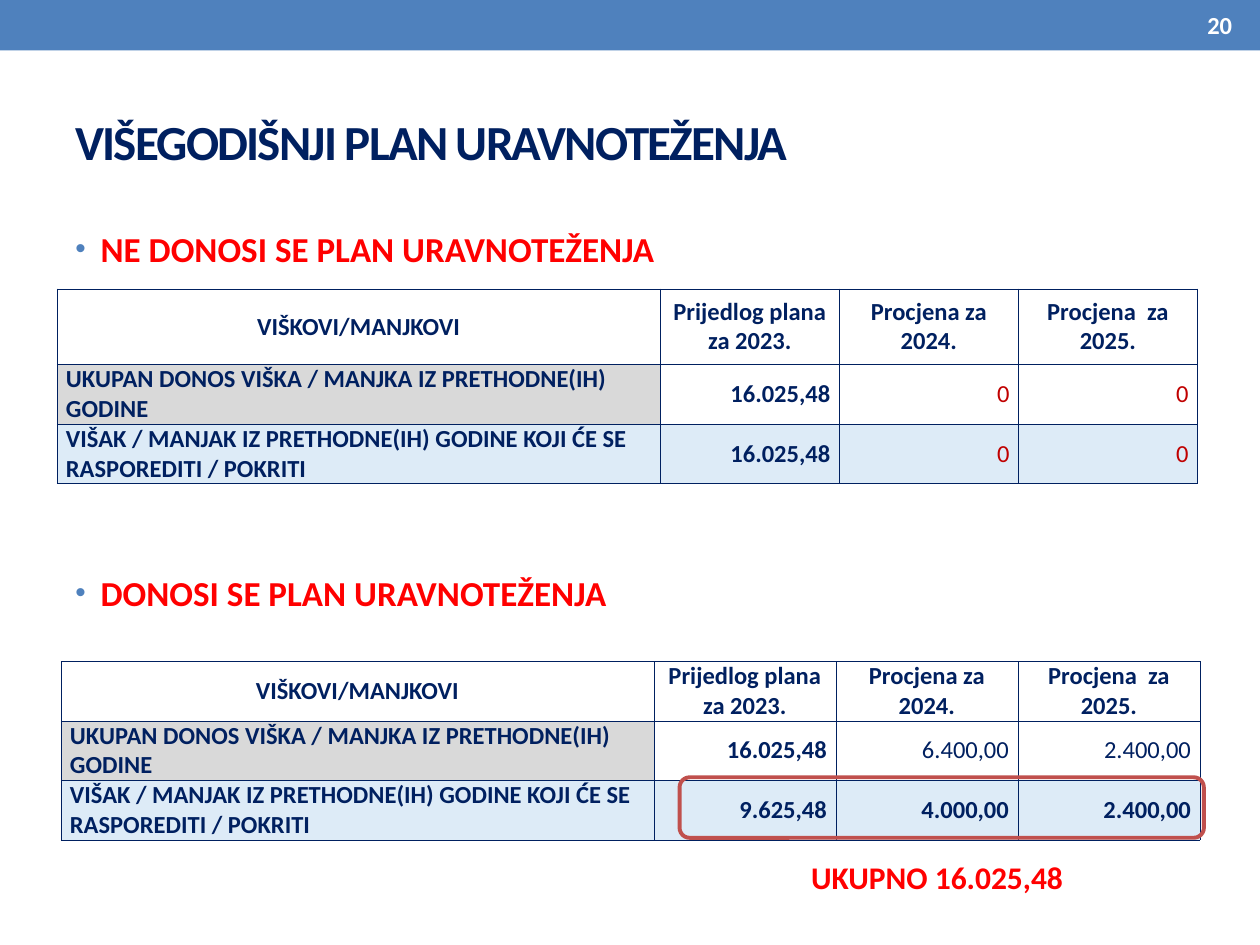
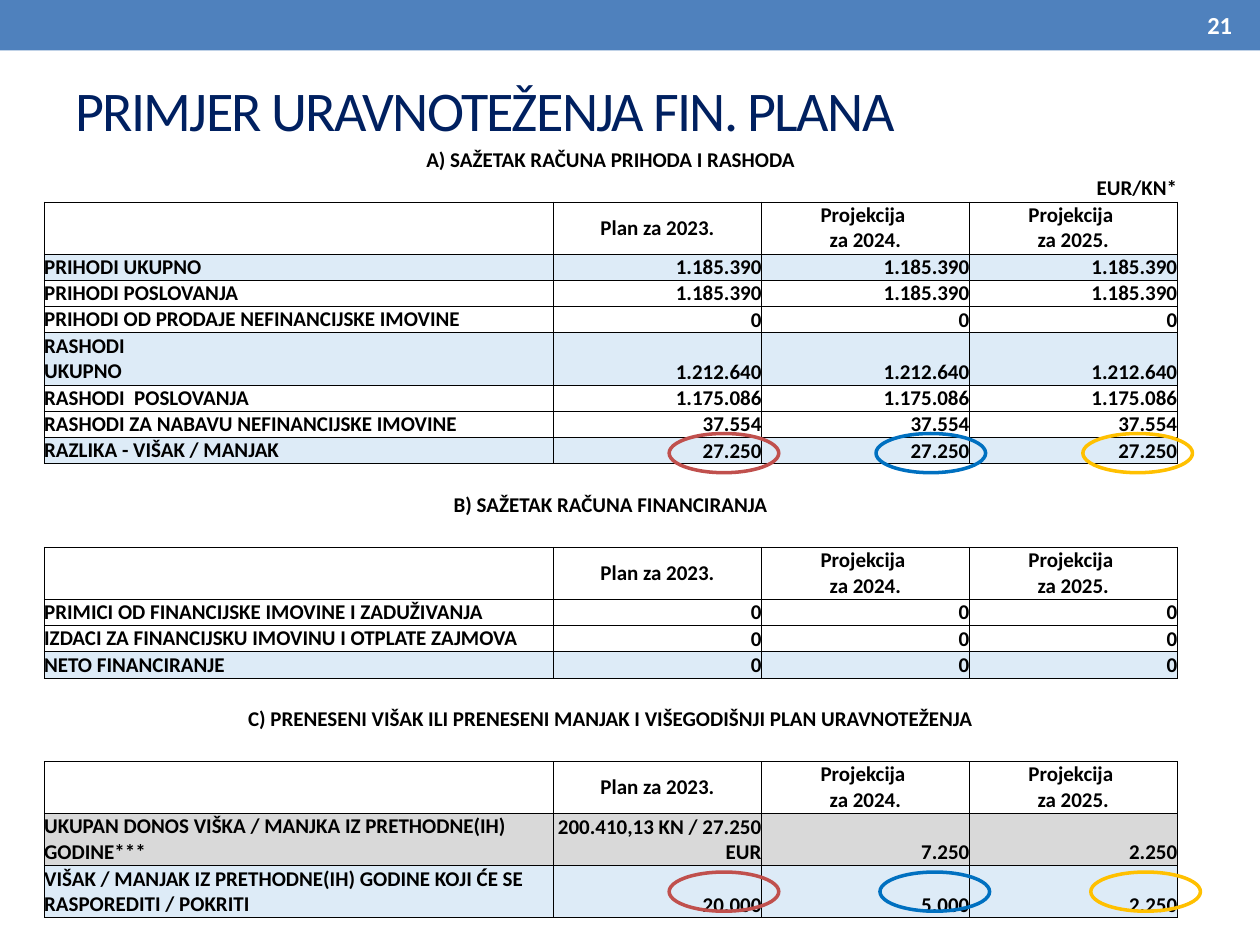
"""Build two slides on the multi-year balancing plan."""
import copy

import lxml.etree
import pptx
import pptx.dml.color
import pptx.enum.shapes
import pptx.enum.text
import pptx.oxml.ns
import pptx.util

Cm, Pt = pptx.util.Cm, pptx.util.Pt
Align = pptx.enum.text.PP_ALIGN
Anchor = pptx.enum.text.MSO_ANCHOR
Shape = pptx.enum.shapes.MSO_SHAPE
qn = pptx.oxml.ns.qn

HUES = {
    "band": "4F81BD", "navy": "002060", "red": "FF0000", "dark": "C00000",
    "brick": "C0504D", "azure": "0070C0", "gold": "FFC000", "black": "000000",
    "white": "FFFFFF", "grey": "D9D9D9", "pale": "DDEBF7",
}
FORMS = {
    "title": ({"size": Pt(28), "bold": True}, "navy"),
    "large": ({"size": Pt(32), "bold": False}, "navy"),
    "point": ({"size": Pt(20), "bold": True}, "red"),
    "total": ({"size": Pt(18), "bold": True}, "red"),
    "page": ({"size": Pt(14), "bold": True}, "white"),
    "strong": ({"size": Pt(14), "bold": True}, "navy"),
    "light": ({"size": Pt(14), "bold": False}, "navy"),
    "zero": ({"size": Pt(14), "bold": False}, "dark"),
    "small": ({"size": Pt(12), "bold": True}, "black"),
}
PLAIN = "{2D5ABB26-0587-4C30-8999-92F81FD0307C}"
DONOS = "UKUPAN DONOS VIŠKA / MANJKA IZ PRETHODNE(IH) GODINE"
VISAK = "VIŠAK / MANJAK IZ PRETHODNE(IH) GODINE KOJI ĆE SE RASPOREDITI / POKRITI"


def tint(name):
    return pptx.dml.color.RGBColor.from_string(HUES[name])


def assign(item, values):
    for key, value in values.items():
        setattr(item, key, value)


class Deck:
    def __init__(self):
        self.file = pptx.Presentation()
        assign(self.file, {"slide_width": Cm(25.4), "slide_height": Cm(19.05)})
        self.slide = None

    def page(self, title, form, high, number):
        self.slide = self.file.slides.add_slide(self.file.slide_layouts[6])
        self.shape(Shape.RECTANGLE, (0, 0, 25.4, 1.02), fill="band")
        para = self.text(title, (1.27, 1.47, 22.86, high), form)
        para.runs[0].font._element.set("spc", "-100")
        self.text(number, (23.09, 0.05, 2, 0.91), "page", Align.RIGHT)

    def shape(self, kind, box, fill=None, line=None, width=2):
        item = self.slide.shapes.add_shape(kind, *map(Cm, box))
        item.shadow.inherit = False
        if fill:
            item.fill.solid()
            item.fill.fore_color.rgb = tint(fill)
        else:
            item.fill.background()
        if line:
            item.line.color.rgb = tint(line)
            item.line.width = Pt(width)
        else:
            item.line.fill.background()

    def style(self, para, form):
        values, hue = FORMS[form]
        for run in para.runs:
            assign(run.font, {"name": "Calibri", **values})
            run.font.color.rgb = tint(hue)
        for gap in para._p.findall(qn("a:br")):
            gap.append(copy.deepcopy(para.runs[0].font._element))
        if not para.runs:
            end = lxml.etree.SubElement(para._p, qn("a:endParaRPr"))
            end.set("sz", str(int(values["size"].pt * 100)))

    def text(self, words, box, form, align=Align.LEFT, anchor=Anchor.MIDDLE):
        frame = self.slide.shapes.add_textbox(*map(Cm, box)).text_frame
        assign(frame, {"word_wrap": True, "vertical_anchor": anchor})
        para = frame.paragraphs[0]
        assign(para, {"text": words, "alignment": align})
        self.style(para, form)
        return para

    def point(self, words, top):
        para = self.text(words, (1.27, top, 22.86, 1.2), "point", anchor=Anchor.TOP)
        props = para._p.get_or_add_pPr()
        props.set("marL", str(Cm(0.51)))
        props.set("indent", str(-Cm(0.51)))
        color = lxml.etree.SubElement(props, qn("a:buClr"))
        lxml.etree.SubElement(color, qn("a:srgbClr"), val=HUES["band"])
        lxml.etree.SubElement(props, qn("a:buSzPct"), val="85000")
        lxml.etree.SubElement(props, qn("a:buFont"), typeface="Arial")
        lxml.etree.SubElement(props, qn("a:buChar"), char="•")

    def table(self, left, top, cols, rows):
        box = map(Cm, (left, top, sum(cols), sum(rows)))
        grid = self.slide.shapes.add_table(len(rows), len(cols), *box).table
        assign(grid, {"first_row": False, "horz_banding": False})
        grid._tbl.tblPr[0].text = PLAIN
        for col, wide in zip(grid.columns, cols):
            col.width = Cm(wide)
        for row, high in zip(grid.rows, rows):
            row.height = Cm(high)
        return grid

    def cell(self, cell, words, form, align=Align.LEFT, anchor=Anchor.MIDDLE,
             fill=None, pad=0, sides="", line=("black", 0.5)):
        assign(cell, {"margin_left": Cm(pad), "margin_right": Cm(pad),
                      "margin_top": 0, "margin_bottom": 0,
                      "vertical_anchor": anchor})
        para = cell.text_frame.paragraphs[0]
        assign(para, {"text": words, "alignment": align})
        self.style(para, form)
        hue, width = line
        for side in sides:
            edge = lxml.etree.SubElement(
                cell._tc.get_or_add_tcPr(), qn("a:ln" + side), w=str(Pt(width)))
            paint = lxml.etree.SubElement(edge, qn("a:solidFill"))
            lxml.etree.SubElement(paint, qn("a:srgbClr"), val=HUES[hue])
        if fill:
            cell.fill.solid()
            cell.fill.fore_color.rgb = tint(fill)
        else:
            cell.fill.background()

    def plan(self, left, top, cols, head, body):
        grid = self.table(left, top, cols, [head, 1.2, 1.2])
        look = {"pad": 0.18, "sides": "LRTB", "line": ("navy", 0.25)}
        names = ("VIŠKOVI/MANJKOVI", "Prijedlog plana za 2023.",
                 "Procjena za 2024.", "Procjena  za 2025.")
        for x, name in enumerate(names):
            self.cell(grid.cell(0, x), name, "strong", Align.CENTER,
                      fill="white", **look)
        marks = ((DONOS, "grey", "white"), (VISAK, "pale", "pale"))
        for y, ((label, first, rest), cells) in enumerate(zip(marks, body), 1):
            self.cell(grid.cell(y, 0), label, "strong", fill=first, **look)
            for x, (value, form) in enumerate(cells, 1):
                self.cell(grid.cell(y, x), value, form, Align.RIGHT,
                          fill=rest, **look)

    def budget(self, left, top, parts):
        rows = []
        for title, note, body in parts:
            rows += [("name", title, 0.56), ("note", note, 0.56), ("head", "", 1.05)]
            rows += [("data", line, line[3]) for line in body]
            rows.append(("note", "", 0.56))
        rows[-1] = ("note", "", 0.5)
        grid = self.table(left, top, [1.52] * 4 + [4.19] * 4,
                          [row[2] for row in rows])
        for y, (kind, data, _) in enumerate(rows):
            cells = [grid.cell(y, x) for x in range(8)]
            if kind == "name":
                cells[0].merge(cells[7])
                self.cell(cells[0], data, "small", Align.CENTER)
            elif kind == "note":
                for x, cell in enumerate(cells):
                    self.cell(cell, data if x == 7 else "", "small", Align.RIGHT)
            else:
                self.line(cells, kind, data)

    def line(self, cells, kind, data):
        if kind == "head":
            label, fill, span = "", None, 1
            values = ["Plan za 2023."] + [
                f"Projekcija \vza {year}." for year in (2024, 2025)]
            look = {"align": Align.CENTER, "fill": "white"}
        else:
            label, fill, values, _, span = data
            look = {"align": Align.RIGHT, "anchor": Anchor.BOTTOM, "fill": fill}
        if span > 1:
            cells[0].merge(cells[span - 1])
        for x, cell in enumerate(cells[:5]):
            sides = "L" * (x == 0) + "R" * (x == 4) + "TB"
            self.cell(cell, "" if x else label, "small", fill=fill, sides=sides)
        for cell, value in zip(cells[5:], values):
            self.cell(cell, value, "small", sides="LRTB", **look)


def entry(label, values, fill=None, high=0.53, span=5):
    values = [values] * 3 if isinstance(values, str) else values
    return label, fill, values, high, span


def main():
    deck = Deck()
    deck.page("VIŠEGODIŠNJI PLAN URAVNOTEŽENJA", "title", 2.74, "20")
    deck.point("NE DONOSI SE PLAN URAVNOTEŽENJA", 4.46)
    deck.point("DONOSI SE PLAN URAVNOTEŽENJA", 11.39)
    whole = ("16.025,48", "strong")
    none = ("0", "zero")
    deck.plan(1.15, 5.82, [12.16] + [3.61] * 3, 1.53, [[whole, none, none]] * 2)
    deck.plan(1.23, 13.33, [11.95] + [3.67] * 3, 1.2, [
        [whole, ("6.400,00", "light"), ("2.400,00", "light")],
        [(value, "strong") for value in ("9.625,48", "4.000,00", "2.400,00")],
    ])
    deck.shape(Shape.ROUNDED_RECTANGLE, (13.7, 15.67, 10.57, 1.22),
               line="brick", width=2.25)
    deck.text("UKUPNO 16.025,48", (16.1, 17.17, 5.8, 1.02), "total")

    deck.page("PRIMJER URAVNOTEŽENJA FIN. PLANA", "large", 1.47, "21")
    deck.budget(0.89, 2.95, [
        ("A) SAŽETAK RAČUNA PRIHODA I RASHODA", "EUR/KN*", [
            entry("PRIHODI UKUPNO", "1.185.390", "pale"),
            entry("PRIHODI POSLOVANJA", "1.185.390"),
            entry("PRIHODI OD PRODAJE NEFINANCIJSKE IMOVINE", "0"),
            entry("RASHODI UKUPNO", "1.212.640", "pale", 1.05, 2),
            entry("RASHODI  POSLOVANJA", "1.175.086"),
            entry("RASHODI ZA NABAVU NEFINANCIJSKE IMOVINE", "37.554"),
            entry("RAZLIKA - VIŠAK / MANJAK", "27.250", "pale")]),
        ("B) SAŽETAK RAČUNA FINANCIRANJA", "", [
            entry("PRIMICI OD FINANCIJSKE IMOVINE I ZADUŽIVANJA", "0"),
            entry("IZDACI ZA FINANCIJSKU IMOVINU I OTPLATE ZAJMOVA", "0"),
            entry("NETO FINANCIRANJE", "0", "pale")]),
        ("C) PRENESENI VIŠAK ILI PRENESENI MANJAK I VIŠEGODIŠNJI PLAN URAVNOTEŽENJA", "", [
            entry(DONOS + "***", ["200.410,13 KN / 27.250 EUR", "7.250", "2.250"],
                  "grey", 1.05),
            entry(VISAK, ["20.000", "5.000", "2.250"], "pale", 1.05)]),
    ])
    for top, step in ((8.74, 4.17), (17.58, 4.25)):
        for spot, hue in enumerate(("brick", "azure", "gold")):
            deck.shape(Shape.OVAL, (13.49 + spot * step, top, 2.21, 0.79), line=hue)
    deck.file.save("out.pptx")


if __name__ == "__main__":
    main()
